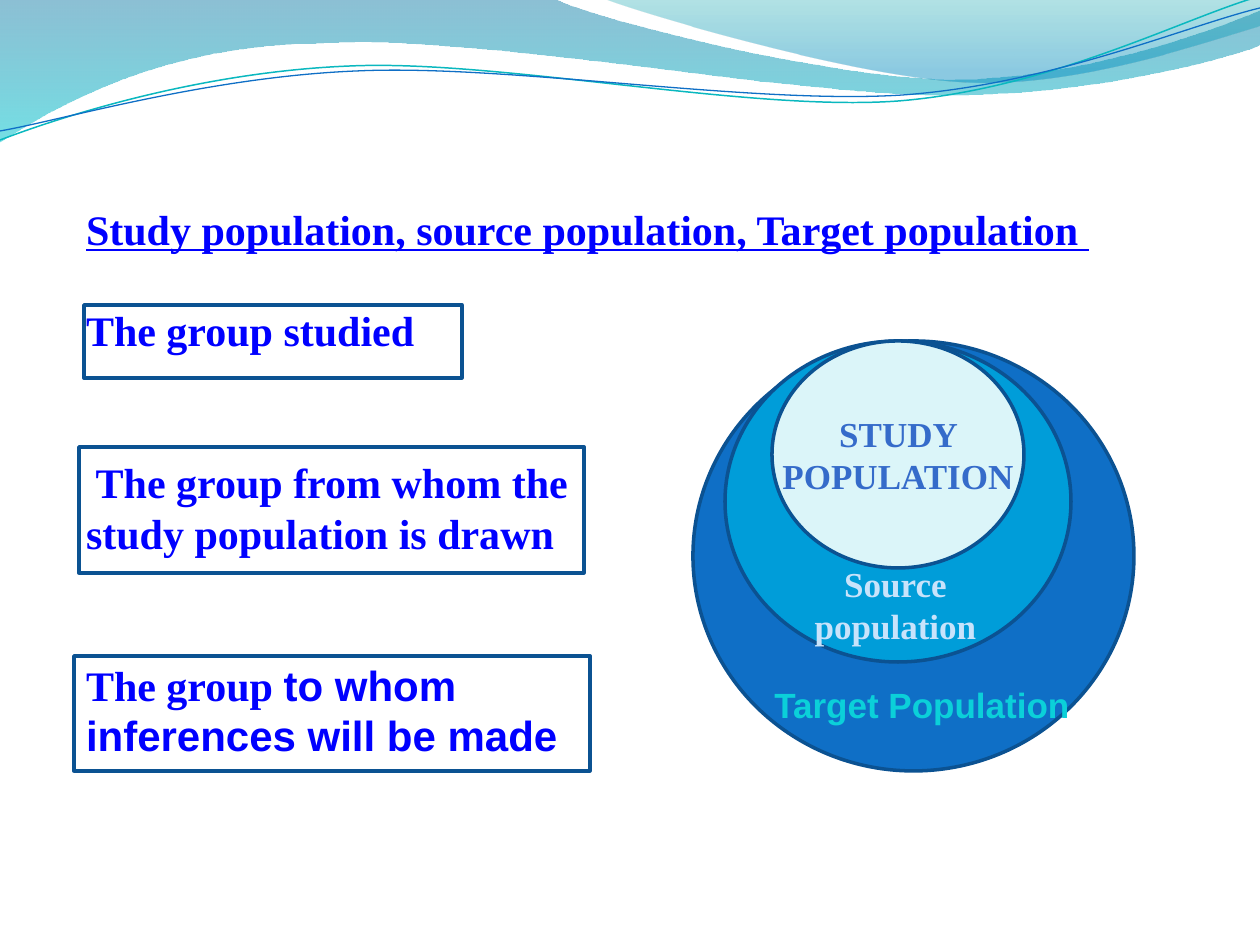
from dataclasses import dataclass

from lxml import etree
from pptx import Presentation
from pptx.dml.color import RGBColor
from pptx.enum.shapes import MSO_SHAPE
from pptx.enum.text import MSO_ANCHOR, PP_ALIGN
from pptx.oxml.ns import qn
from pptx.util import Emu, Pt

RECT, OVAL = MSO_SHAPE.RECTANGLE, MSO_SHAPE.OVAL
TOP = MSO_ANCHOR.TOP
LEFT, CENTER = PP_ALIGN.LEFT, PP_ALIGN.CENTER
SCALE = 914400 / 126  # EMU per px


@dataclass(frozen=True)
class Theme:
    serif: str = "Times New Roman"
    sans: str = "Arial"
    body: int = 24
    label: int = 20
    gap: int = 58  # points between definitions
    text: str = "0000FF"
    edge: str = "0B5292"
    target: str = "0F6FC6"
    source: str = "009DD9"
    study: str = "DBF5F9"
    aqua: str = "0BD0D9"
    pale: str = "C8E3FB"
    blue: str = "356BCA"
    teal: str = "0AB8BF"


T = Theme()

# Wave paths in px: a start point, then lines (one point) or curves (three)
BAND = [((0, -1),), ((554, -1),),
        ((600, 21), (837, 79), (955, 79)), ((1075, 79), (1207, 33), (1260, 11)),
        ((1261, 45),),
        ((1239, 55), (1096, 96), (940, 95)), ((784, 94), (481, 35), (324, 43)),
        ((163, 44), (58, 105), (-1, 142))]
CREST = [((604, -1),), ((641, 14), (859, 78), (969, 82)),
         ((1079, 87), (1211, 40), (1260, 26)), ((1260, 0),)]
UPPER = [((0, 140),), ((60, 117), (199, 72), (349, 66)),
         ((498, 59), (747, 112), (898, 101)), ((1049, 89), (1182, 19), (1257, -3))]
LOWER = [((0, 131),), ((59, 121), (207, 77), (357, 71)),
         ((508, 64), (752, 105), (903, 95)), ((1053, 84), (1186, 26), (1260, 8))]


def px(n):
    return Emu(round(n * SCALE))


def rgb(code):
    return RGBColor.from_string(code)


def write(frame, groups, font=T.serif, size=T.body, color=T.text, align=LEFT,
          under=False, pad=(12, 6)):
    """Each group is a list of lines; a line is a list of (text, font) or a string."""
    frame.word_wrap = True
    frame.vertical_anchor = TOP
    frame.margin_left = frame.margin_right = px(pad[0])
    frame.margin_top = frame.margin_bottom = px(pad[1])
    para = None
    for group in groups:
        for i, line in enumerate(group):
            first = para is None
            para = frame.paragraphs[0] if first else frame.add_paragraph()
            para.alignment = align
            para.space_before = Pt(0 if first or i else T.gap)
            for text, face in [(line, font)] if isinstance(line, str) else line:
                run = para.add_run()
                run.text = text
                run.font.name, run.font.size = face, Pt(size)
                run.font.bold, run.font.underline = True, under
                run.font.color.rgb = rgb(color)


def trace(slide, path, close):
    """Draw a path; runs of three points become true curves."""
    points = [(px(x), px(y)) for part in path for x, y in part]
    pen = slide.shapes.build_freeform(*points[0])
    pen.add_line_segments(points[1:], close=close)
    shape = pen.convert_to_shape()
    shape.shadow.inherit = False
    lines = list(shape.element.iter(qn("a:lnTo")))
    for part in path[1:]:
        used, lines = lines[:len(part)], lines[len(part):]
        if len(part) == 3:
            bend = etree.Element(qn("a:cubicBezTo"))
            used[0].addprevious(bend)
            for line in used:
                bend.append(line[0])
                line.getparent().remove(line)
    return shape


def wave(slide, path, *stops):
    """Area with a see-through gradient; stops are (place, colour, alpha %)."""
    shape = trace(slide, path, True)
    shape.line.fill.background()
    shape.fill.gradient()
    shape.fill.gradient_angle = 270
    for stop, (place, color, _) in zip(shape.fill.gradient_stops, stops):
        stop.position = place
        stop.color.rgb = rgb(color)
    for tag, (_, _, alpha) in zip(shape.element.spPr.iter(qn("a:srgbClr")), stops):
        etree.SubElement(tag, qn("a:alpha")).set("val", str(alpha * 1000))


def curve(slide, path, color, width):
    shape = trace(slide, path, False)
    shape.fill.background()
    shape.line.color.rgb = rgb(color)
    shape.line.width = Pt(width)


def block(slide, kind, area, fill=None):
    shape = slide.shapes.add_shape(kind, *map(px, area))
    shape.shadow.inherit = False
    if fill:
        shape.fill.solid()
        shape.fill.fore_color.rgb = rgb(fill)
    else:
        shape.fill.background()
    shape.line.color.rgb = rgb(T.edge)
    shape.line.width = Pt(2)


def note(slide, area, groups, **form):
    box = slide.shapes.add_textbox(*map(px, area))
    write(box.text_frame, groups, **form)


def main():
    deck = Presentation()
    deck.slide_width, deck.slide_height = px(1260), px(945)
    slide = deck.slides.add_slide(deck.slide_layouts[5])

    # Waves along the top
    wave(slide, BAND, (0, "0074A1", 45), (1, "00C6CF", 55))
    wave(slide, CREST, (0, "00A1A9", 30), (0.8, "008BBF", 45))
    curve(slide, UPPER, T.teal, 0.85)
    curve(slide, LOWER, T.target, 0.75)

    # Title
    title = slide.shapes.title
    title.left, title.top, title.width, title.height = map(px, (73, 197, 1092, 60))
    write(title.text_frame, [["Study population, source population, Target population "]],
          under=True, pad=(13, 6))

    # Definitions and their frames
    note(slide, (73, 299, 1092, 574), [
        ["The group studied"],
        [" The group from whom the", "study population is drawn"],
        [[("The group ", T.serif), ("to whom", T.sans)],
         [("inferences will be made", T.sans)]],
    ], pad=(13, 6))
    for area in [(84, 305, 378, 73), (79, 447, 505, 126), (74, 656, 516, 115)]:
        block(slide, RECT, area)

    # Nested populations, touching at the top
    for x, wide, high, fill in [(693, 441, 430, T.target), (725, 346, 321, T.source),
                                (772, 252, 227, T.study)]:
        block(slide, OVAL, (x, 341, wide, high), fill)
    for area, text, font, color in [
            ((725, 677, 394, 55), "Target Population", T.sans, T.aqua),
            ((772, 556, 247, 97), "Source population", T.serif, T.pale),
            ((760, 406, 276, 97), "STUDY POPULATION", T.serif, T.blue)]:
        note(slide, area, [[text]], font=font, color=color, size=T.label, align=CENTER)

    deck.save("out.pptx")


if __name__ == "__main__":
    main()
